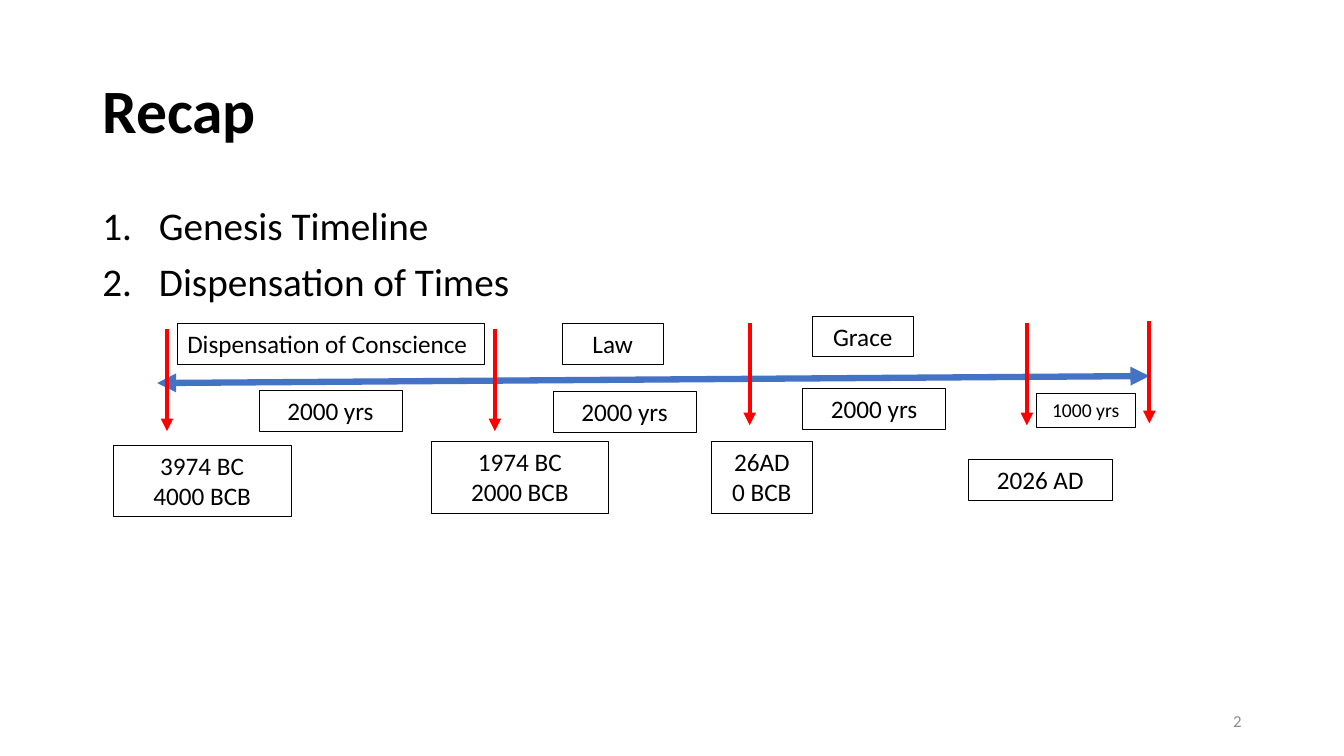
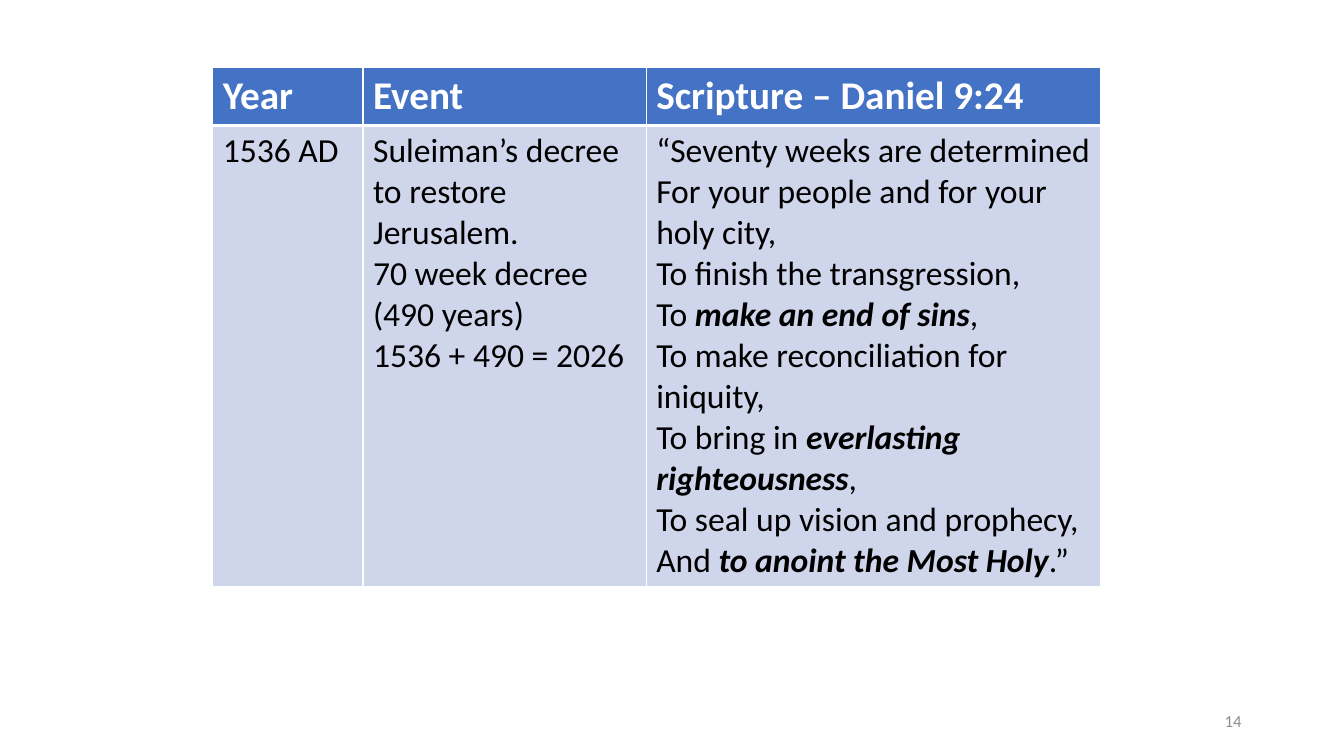
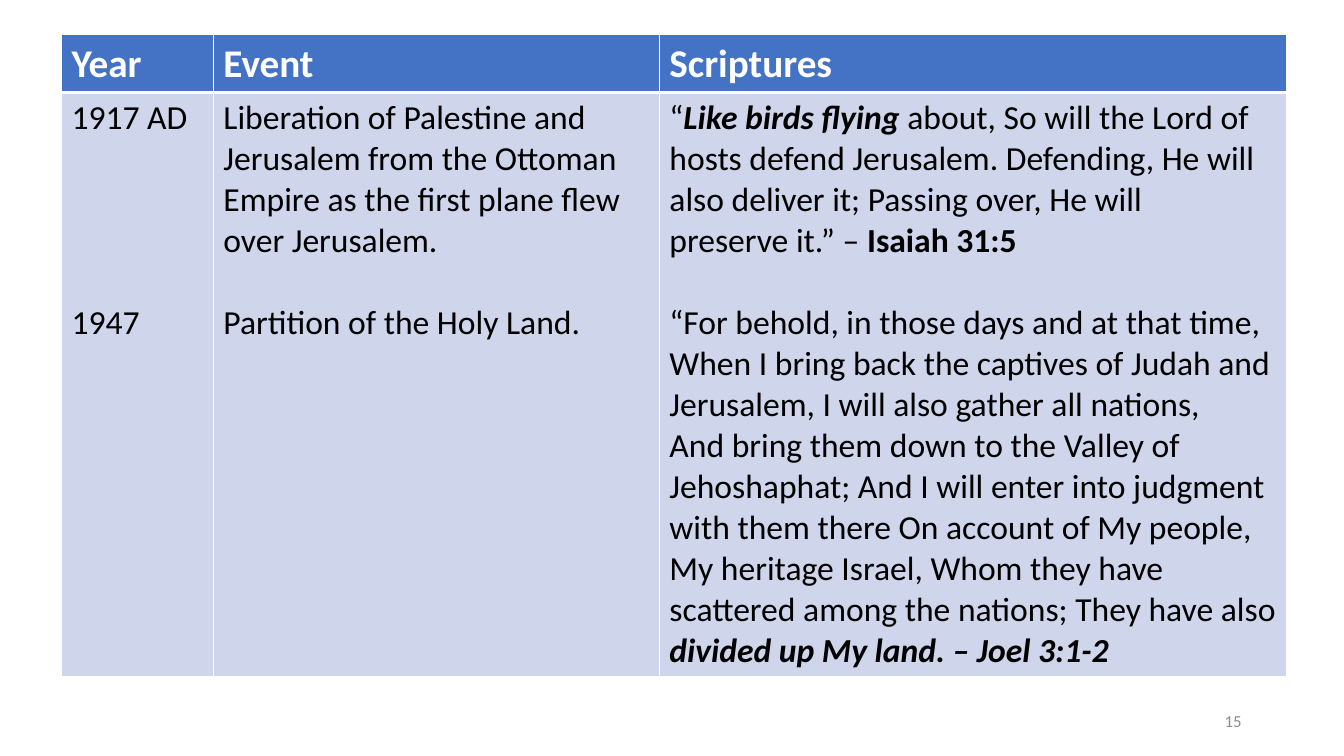
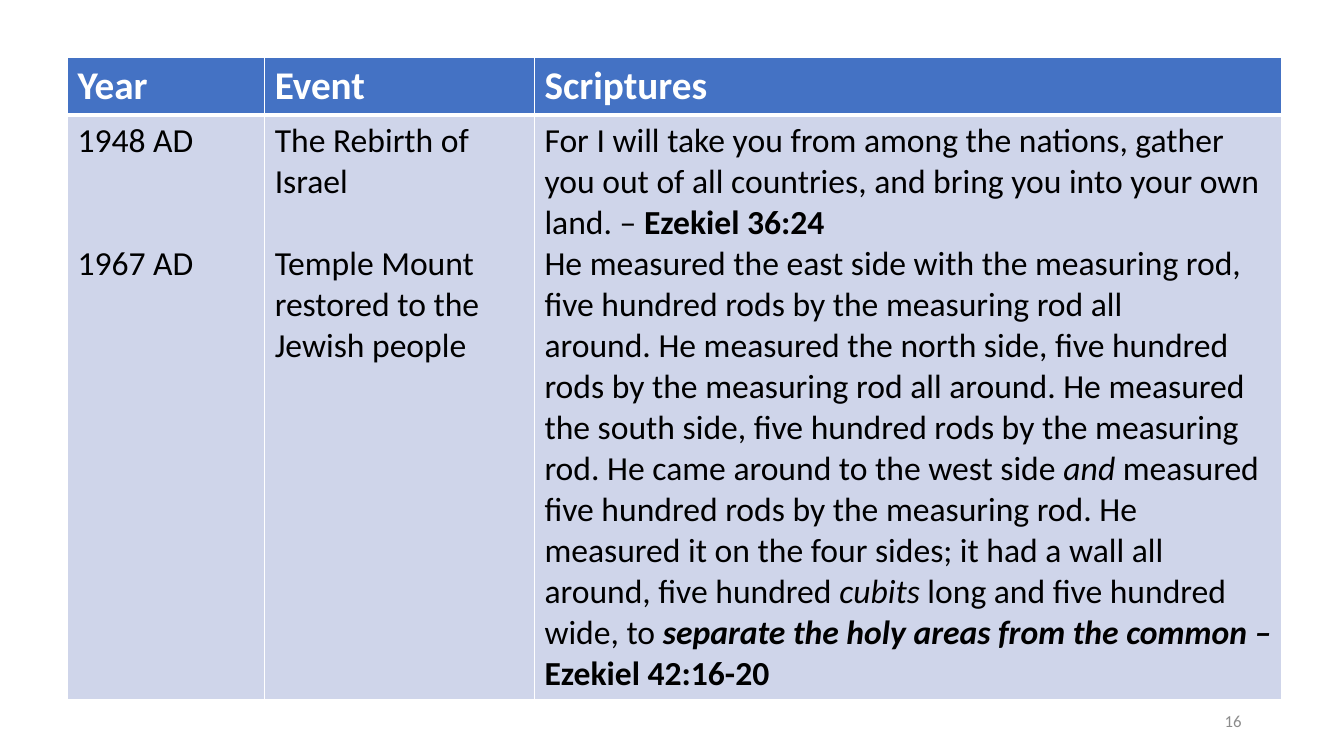
"""Build four slides: a dispensation timeline and three tables of prophecy."""
from dataclasses import dataclass

from lxml import etree
from pptx import Presentation
from pptx.dml.color import RGBColor
from pptx.enum.shapes import MSO_CONNECTOR
from pptx.enum.text import MSO_ANCHOR, MSO_AUTO_SIZE, PP_ALIGN
from pptx.oxml.ns import qn
from pptx.util import Pt

LEFT, CENTER, RIGHT = PP_ALIGN.LEFT, PP_ALIGN.CENTER, PP_ALIGN.RIGHT
TOP, MIDDLE = MSO_ANCHOR.TOP, MSO_ANCHOR.MIDDLE
NO_FIT = MSO_AUTO_SIZE.NONE
STRAIGHT = MSO_CONNECTOR.STRAIGHT
TITLE_ONLY, BLANK = 5, 6
TIE, HARD_SPACE = "~", chr(160)


@dataclass(frozen=True)
class Theme:
    """Colours, type sizes and measures shared by all slides."""
    font: str = "Calibri"
    ink: str = "000000"
    paper: str = "FFFFFF"
    accent: str = "4472C4"
    band: str = "CFD5EA"
    marker: str = "FF0000"
    muted: str = "8C8C8C"
    title: int = 44
    heading: int = 28
    cell: int = 24
    label: int = 18
    small: int = 14
    number: int = 12
    leading: float = 1.22
    padding: float = 7.2


T = Theme()


def text_height(size, lines=1):
    """Return the height in points of a box holding some lines of text."""
    return size * T.leading * lines + T.padding


def number_paragraph(p, indent):
    """Give a paragraph an automatic number and a hanging indent."""
    pPr = p._p.get_or_add_pPr()
    pPr.set("marL", str(Pt(indent)))
    pPr.set("indent", str(-Pt(indent)))
    bullet = etree.SubElement(pPr, qn("a:buAutoNum"))
    bullet.set("type", "arabicPeriod")


def add_run(p, text, style, size, color, bold):
    """Add text with line breaks and ties; style may hold b and i."""
    for i, line in enumerate(text.replace(TIE, HARD_SPACE).split("\n")):
        if i:
            p.add_line_break()
        if line:
            r = p.add_run()
            r.text = line
            r.font.name = T.font
            r.font.size = Pt(size)
            r.font.color.rgb = RGBColor.from_string(color)
            r.font.bold = bold or "b" in style
            r.font.italic = "i" in style


def write(tf, paragraphs, size=T.label, color=T.ink, bold=False, align=LEFT,
          anchor=TOP, spacing=None, gap=0, number_indent=None):
    """Fill a text frame; a paragraph is a string or a list of runs."""
    tf.word_wrap = True
    tf.vertical_anchor = anchor
    for i, runs in enumerate(paragraphs):
        p = tf.add_paragraph() if i else tf.paragraphs[0]
        if number_indent:
            number_paragraph(p, number_indent)
        p.alignment = align
        if spacing:
            p.line_spacing = spacing
        if i and gap:
            p.space_before = Pt(gap)
        for run in [runs] if isinstance(runs, str) else runs:
            text, style = (run, "") if isinstance(run, str) else run
            add_run(p, text, style, size, color, bold)


def add_text(s, x, y, w, h, paragraphs, **fmt):
    """Add a text box and return it."""
    sp = s.shapes.add_textbox(Pt(x), Pt(y), Pt(w), Pt(h))
    write(sp.text_frame, paragraphs, **fmt)
    return sp


def add_title(s, text):
    """Place and format the title placeholder."""
    sp = s.shapes.title
    sp.left, sp.top, sp.width, sp.height = Pt(66), Pt(28.8), Pt(828), Pt(104.4)
    write(sp.text_frame, [text], size=T.title, bold=True, anchor=MIDDLE, spacing=0.9)
    sp.text_frame.auto_size = NO_FIT


def add_label(s, x, y, w, *lines, size=T.label, align=CENTER):
    """Add a thinly outlined label as high as its lines."""
    sp = add_text(s, x, y, w, text_height(size, len(lines)), lines, size=size, align=align)
    sp.line.color.rgb = RGBColor.from_string(T.ink)
    sp.line.width = Pt(0.25)


def add_arrow(s, x1, y1, x2, y2, color, width, ends=("tailEnd",)):
    """Add a straight connector with triangles at the named ends."""
    c = s.shapes.add_connector(STRAIGHT, Pt(x1), Pt(y1), Pt(x2), Pt(y2))
    c.line.color.rgb = RGBColor.from_string(color)
    c.line.width = Pt(width)
    for end in ends:
        etree.SubElement(c.line._ln, qn(f"a:{end}")).set("type", "triangle")
    etree.SubElement(c._element.spPr, qn("a:effectLst"))


def add_borders(cell, top, bottom):
    """Draw light cell borders, with given widths above and below."""
    tcPr = cell._tc.get_or_add_tcPr()
    for side, width in (("L", 1), ("R", 1), ("T", top), ("B", bottom)):
        ln = etree.SubElement(tcPr, qn(f"a:ln{side}"), w=str(Pt(width)))
        fill = etree.SubElement(ln, qn("a:solidFill"))
        etree.SubElement(fill, qn("a:srgbClr"), val=T.paper)


def fill_cell(cell, color, top, bottom):
    """Give a cell its borders and its fill."""
    add_borders(cell, top, bottom)
    cell.fill.solid()
    cell.fill.fore_color.rgb = RGBColor.from_string(color)


def add_event_table(s, x, y, widths, lines, heading, cells):
    """Add a year, event and scripture table; a cell is (blank lines, paragraphs)."""
    heights = text_height(T.heading), text_height(T.cell, lines)
    table = s.shapes.add_table(2, len(widths), Pt(x), Pt(y),
                               Pt(sum(widths)), Pt(sum(heights))).table
    table.horz_banding = False
    for row, height in zip(table.rows, heights):
        row.height = Pt(height)
    columns = zip(widths, ("Year", "Event", heading), cells)
    for i, (width, head, (blanks, paragraphs)) in enumerate(columns):
        table.columns[i].width = Pt(width)
        top, body = table.cell(0, i), table.cell(1, i)
        fill_cell(top, T.accent, 1, 3)
        fill_cell(body, T.band, 3, 1)
        write(top.text_frame, [head], size=T.heading, color=T.paper, bold=True)
        write(body.text_frame, paragraphs, size=T.cell, gap=blanks * T.cell * T.leading)


def add_slide(prs, layout, number):
    """Add a slide with its page number."""
    s = prs.slides.add_slide(prs.slide_layouts[layout])
    add_text(s, 678, 500.4, 216, 28.8, [str(number)], size=T.number,
             color=T.muted, align=RIGHT, anchor=MIDDLE)
    return s


def add_timeline(s):
    """Draw the axis, its markers and its labels."""
    add_arrow(s, 112.3, 273.6, 821, 268.6, T.accent, 4.5, ("headEnd", "tailEnd"))
    for x, y in ((119.3, 235), (353.5, 235), (535.5, 230.8), (733.5, 230.8), (821, 229.4)):
        add_arrow(s, x, y, x, y + 73, T.marker, 3)
    add_label(s, 126.7, 231.1, 219.3, "Dispensation of Conscience", align=LEFT)
    add_label(s, 401.3, 231.1, 72.7, "Law")
    add_label(s, 579.9, 225.6, 72.7, "Grace")
    for x, y in ((185, 278.8), (395, 279.4), (573.3, 277.2)):
        add_label(s, x, y, 102.2, "2000 yrs")
    add_label(s, 740.2, 280.8, 70.6, "1000 yrs", size=T.small)
    add_label(s, 81.1, 317.8, 126.7, "3974 BC", "4000 BCB")
    add_label(s, 308, 315.2, 126.7, "1974 BC", "2000 BCB")
    add_label(s, 508.2, 315.2, 72, "26AD", "0 BCB")
    add_label(s, 691.9, 328.3, 102.2, "2026 AD")


def recap_slide(prs):
    """Build the recap with its timeline."""
    s = add_slide(prs, TITLE_ONLY, 2)
    add_title(s, "Recap")
    add_text(s, 66, 144, 875.5, 342.7, ["Genesis Timeline", "Dispensation of Times"],
             size=T.heading, spacing=0.9, gap=10, number_indent=40.5)
    add_timeline(s)


def decree_slide(prs):
    """Build the table on the seventy weeks."""
    s = add_slide(prs, BLANK, 14)
    add_event_table(s, 152, 48.2, (107.3, 202.3, 324.7), 11, "Scripture – Daniel 9:24", [
        (0, ["1536 AD"]),
        (0, ["Suleiman’s decree to restore Jerusalem.",
             "70 week decree (490 years)",
             "1536 + 490 = 2026"]),
        (0, [["“Seventy~weeks are determined\nFor your people and for your holy city,\n"
              "To finish the transgression,\nTo ",
              ("make an end of sins", "bi"),
              ",\nTo make reconciliation for iniquity,"],
             ["To bring in ",
              ("everlasting righteousness", "bi"),
              ",\nTo seal up vision and prophecy,\nAnd ",
              ("to anoint~the Most Holy", "bi"),
              ".”"]]),
    ])


def liberation_slide(prs):
    """Build the table on 1917 and 1947."""
    s = add_slide(prs, BLANK, 15)
    add_event_table(s, 43.9, 24.8, (108.5, 318.6, 447.8), 14, "Scriptures", [
        (4, ["1917 AD", "1947"]),
        (1, ["Liberation of Palestine and Jerusalem from the Ottoman Empire "
             "as the first plane flew over Jerusalem.",
             "Partition of the Holy Land."]),
        (1, [["“",
              ("Like birds flying ", "bi"),
              "about, So will the~Lord~of hosts defend Jerusalem. Defending, He will "
              "also deliver~it; Passing over, He will preserve~it.” – ",
              ("Isaiah 31:5", "b")],
             ["“For behold,~in those days and at that time,\n"
              "When I bring back the captives of Judah and Jerusalem,~"
              "I will also gather all nations,\n"
              "And bring them down to the Valley of Jehoshaphat; And I~will enter into "
              "judgment with them there On account of My people, My heritage Israel, "
              "Whom they have scattered among the nations; They have also ",
              ("divided up My land. – Joel 3:1-2", "bi")]]),
    ])


def rebirth_slide(prs):
    """Build the table on 1948 and 1967."""
    s = add_slide(prs, BLANK, 16)
    add_event_table(s, 48.2, 41, (140.9, 192.7, 533.8), 14, "Scriptures", [
        (2, ["1948 AD", "1967 AD"]),
        (1, ["The Rebirth of Israel", "Temple Mount restored to the Jewish people"]),
        (0, [["For~I will take you from among the nations, gather you out of all "
              "countries, and bring you into your own land. – ",
              ("Ezekiel 36:24", "b")],
             ["He measured the east side with the~measuring rod, five hundred rods by "
              "the measuring rod all around.~He measured the north side, five hundred "
              "rods by the measuring rod all around.~He measured the south side, five "
              "hundred rods by the measuring rod.~He came around to the west side~",
              ("and", "i"),
              "~measured five hundred rods by the measuring rod.~He measured it on the "
              "four sides;~it had a wall all around,~five hundred~",
              ("cubits", "i"),
              "~long and five hundred wide, to ",
              ("separate the holy areas from the~common – ", "bi"),
              ("Ezekiel 42:16-20", "b")]]),
    ])


def main():
    """Build and save the presentation."""
    prs = Presentation()
    prs.slide_width, prs.slide_height = Pt(960), Pt(540)
    recap_slide(prs)
    decree_slide(prs)
    liberation_slide(prs)
    rebirth_slide(prs)
    prs.save("out.pptx")


if __name__ == "__main__":
    main()
